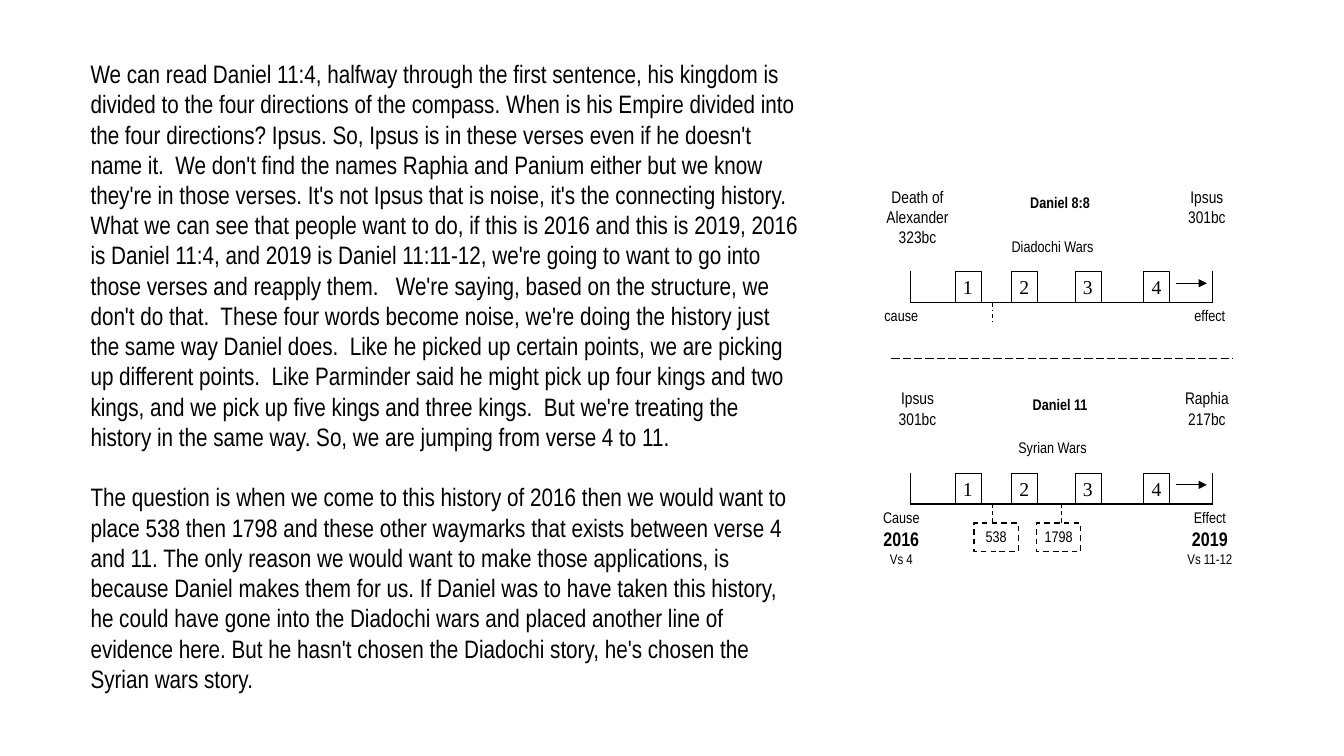
from dataclasses import dataclass

from pptx import Presentation
from pptx import util as u
from pptx.dml.color import RGBColor
from pptx.enum import dml, shapes, text
from pptx.oxml import ns
from lxml import etree


@dataclass(frozen=True)
class Theme:
    ink: RGBColor = RGBColor(0, 0, 0)
    body_font: str = "Arial Narrow"
    number_font: str = "Times New Roman"
    body: float = 18
    heading: float = 12
    label: float = 11
    year: float = 14
    verse: float = 10
    hairline: float = 0.25
    rule: float = 0.75
    date_border: float = 1


THEME = Theme()
DASH = dml.MSO_LINE.DASH

# Sentences of each paragraph, joined by a space
VERSE_SENTENCES = [
    "We can read Daniel 11:4, halfway through the first sentence, his kingdom is divided to the "
    "four directions of the compass.",
    "When is his Empire divided into the four directions? Ipsus.",
    "So, Ipsus is in these verses even if he doesn't name it. ",
    "We don't find the names Raphia and Panium either but we know they're in those verses.",
    "It's not Ipsus that is noise, it's the connecting history. ",
    "What we can see that people want to do, if this is 2016 and this is 2019, 2016 is Daniel 11:4, "
    "and 2019 is Daniel 11:11-12, we're going to want to go into those verses and reapply them.  ",
    "We're saying, based on the structure, we don't do that. ",
    "These four words become noise, we're doing the history just the same way Daniel does. ",
    "Like he picked up certain points, we are picking up different points. ",
    "Like Parminder said he might pick up four kings and two kings, and we pick up five kings and "
    "three kings. ",
    "But we're treating the history in the same way.",
    "So, we are jumping from verse 4 to 11.",
]
WAYMARK_SENTENCES = [
    "The question is when we come to this history of 2016 then we would want to place 538 then 1798 "
    "and these other waymarks that exists between verse 4 and 11.",
    "The only reason we would want to make those applications, is because Daniel makes them for us.",
    "If Daniel was to have taken this history, he could have gone into the Diadochi wars and placed "
    "another line of evidence here.",
    "But he hasn't chosen the Diadochi story, he's chosen the Syrian wars story.",
]


def write(shape, lines, size, font=THEME.body_font, bold=False, inset=0.04,
          align=text.PP_ALIGN.CENTER):
    """Each line is a string, or a (string, size, bold) tuple."""
    frame = shape.text_frame
    frame.word_wrap = True
    frame.vertical_anchor = text.MSO_ANCHOR.TOP
    frame.margin_left = frame.margin_right = u.Inches(inset)
    frame.margin_top = frame.margin_bottom = u.Inches(0.04)
    for index, line in enumerate(lines):
        words, points, strong = (line, size, bold) if isinstance(line, str) else line
        paragraph = frame.paragraphs[0] if index == 0 else frame.add_paragraph()
        paragraph.text = words
        paragraph.alignment = align
        paragraph.font.name = font
        paragraph.font.size = u.Pt(points)
        paragraph.font.bold = strong
        paragraph.font.color.rgb = THEME.ink
    return frame


def add_label(slide, left, top, width, height, lines, size=THEME.label, bold=False):
    box = slide.shapes.add_textbox(*map(u.Inches, (left, top, width, height)))
    write(box, lines, size, bold=bold)


def add_box(slide, left, top, width, height, words, size, font, border, dash=None):
    box = slide.shapes.add_shape(shapes.MSO_SHAPE.RECTANGLE,
                                 *map(u.Inches, (left, top, width, height)))
    box.shadow.inherit = False
    box.fill.background()
    box.line.color.rgb = THEME.ink
    box.line.width = u.Pt(border)
    if dash:
        box.line.dash_style = dash
    write(box, [words], size, font)


def add_line(slide, x1, y1, x2, y2, dash=None, arrow=False):
    line = slide.shapes.add_connector(shapes.MSO_CONNECTOR.STRAIGHT,
                                      *map(u.Inches, (x1, y1, x2, y2)))
    line.line.color.rgb = THEME.ink
    line.line.width = u.Pt(THEME.rule)
    if dash:
        line.line.dash_style = dash
    properties = line._element.spPr
    if arrow:
        etree.SubElement(properties.find(ns.qn("a:ln")), ns.qn("a:tailEnd"), type="triangle")
    etree.SubElement(properties, ns.qn("a:effectLst"))


def add_commentary(slide, left, top, width, height):
    box = slide.shapes.add_textbox(*map(u.Inches, (left, top, width, height)))
    paragraphs = [" ".join(sentences) for sentences in (VERSE_SENTENCES, WAYMARK_SENTENCES)]
    frame = write(box, paragraphs, THEME.body, inset=0.1, align=text.PP_ALIGN.LEFT)
    frame.margin_top = frame.margin_bottom = u.Inches(0.05)
    frame.paragraphs[1].space_before = u.Pt(21.6)


def add_timeline(slide, left, top, title, wars, start, end, cause, effect,
                 waymarks, waymark_dash):
    # Headings
    add_label(slide, left, top, 0.88, 0.69, start, THEME.heading)
    add_label(slide, left + 2.87, top, 0.88, 0.69, end, THEME.heading)
    add_label(slide, left + 1, top + 0.07, 1.71, 0.24, [title], bold=True)
    add_label(slide, left + 1.31, top + 0.5, 0.94, 0.28, [wars])

    # Base line with end ticks
    first, last = left + 0.37, left + 3.37
    tick, base = top + 0.88, top + 1.19
    for x in (first, last):
        add_line(slide, x, tick, x, base)
    add_line(slide, first, base, last, base)

    # Numbered wars and arrow
    for number, offset in enumerate((0.81, 1.37, 2, 2.68), start=1):
        add_box(slide, left + offset, tick, 0.26, 0.31, str(number),
                THEME.year, THEME.number_font, THEME.hairline)
    add_line(slide, left + 3, top + 1, left + 3.31, top + 1, arrow=True)

    # Cause and effect
    for offset, lines in ((0, cause), (3.06, effect)):
        add_label(slide, left + offset, base, 0.56, 0.28 if len(lines) == 1 else 0.69, lines)

    # Waymarks below the line
    for stem, box_offset, date in waymarks:
        add_line(slide, left + stem, base, left + stem, base + 0.19, waymark_dash)
        if date:
            add_box(slide, left + box_offset, base + 0.19, 0.44, 0.28, date,
                    THEME.label, THEME.body_font, THEME.date_border, DASH)


def dated(word, year, verses):
    return [word, (year, THEME.year, True), (verses, THEME.verse, False)]


def add_diagram(slide, left, top):
    add_timeline(slide, left, top, "Daniel 8:8", "Diadochi Wars",
                 ["Death of", "Alexander", "323bc"], ["Ipsus", "301bc"],
                 ["cause"], ["effect"],
                 [(1.18, 0, None)], dml.MSO_LINE.DASH_DOT)
    add_line(slide, left + 0.18, top + 1.75, left + 3.56, top + 1.75, dml.MSO_LINE.LONG_DASH)
    add_timeline(slide, left, top + 2, "Daniel 11", "Syrian Wars",
                 ["Ipsus", "301bc"], ["Raphia", "217bc"],
                 dated("Cause", "2016", "Vs 4"), dated("Effect", "2019", "Vs 11-12"),
                 [(1.18, 1, "538"), (1.87, 1.62, "1798")], DASH)


def main():
    presentation = Presentation()
    presentation.slide_width = u.Inches(13.33)
    presentation.slide_height = u.Inches(7.5)
    slide = presentation.slides.add_slide(presentation.slide_layouts[6])
    add_commentary(slide, 0.8, 0.53, 7.26, 6.66)
    add_diagram(slide, 8.66, 1.81)
    presentation.save("out.pptx")


if __name__ == "__main__":
    main()
